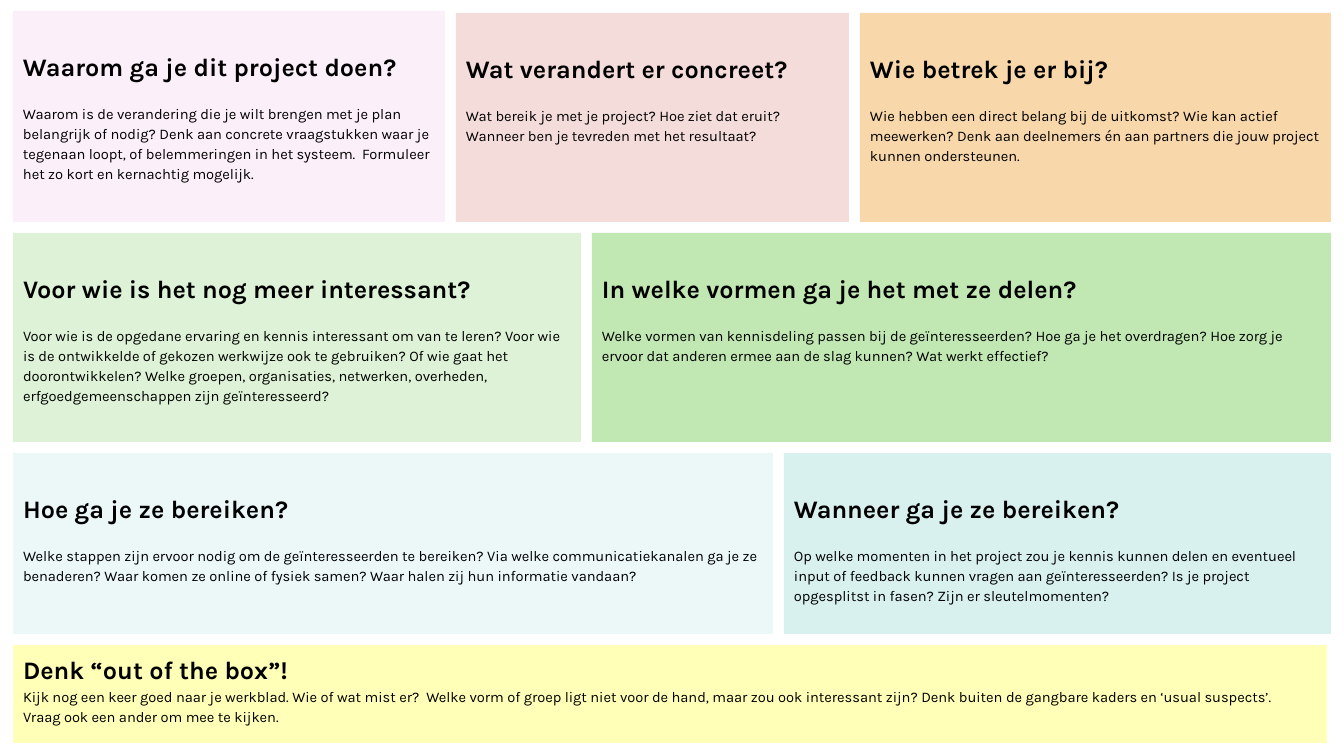
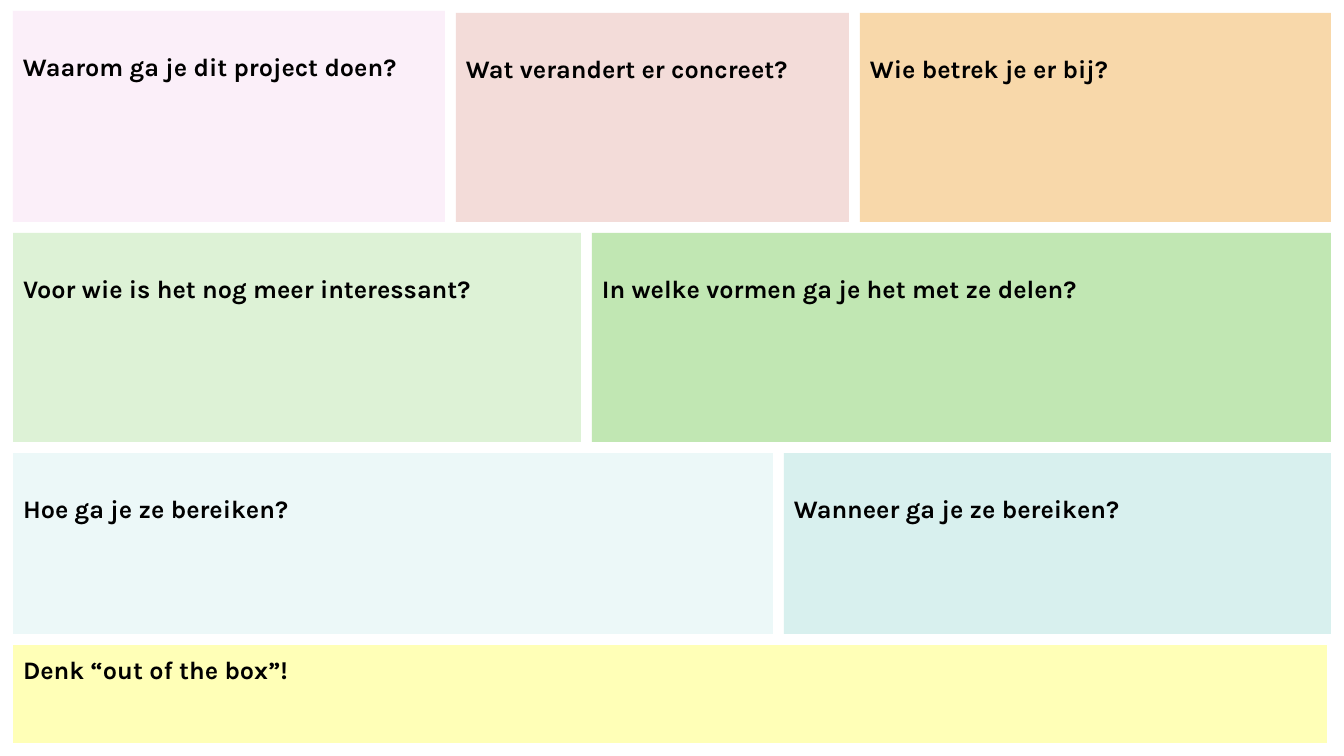
import dataclasses
import typing

import pptx
import pptx.dml.color
import pptx.enum.shapes
import pptx.enum.text
import pptx.oxml
import pptx.oxml.ns
import pptx.util

EMU_PER_PX = 12192000 / 1344


def px(length):
    return pptx.util.Emu(round(length * EMU_PER_PX))


@dataclasses.dataclass(frozen=True)
class Theme:
    font: str = "Karla"
    ink: str = "000000"
    pink: str = "FBEFF9"
    rose: str = "F3DCD9"
    orange: str = "F8D8AA"
    light_green: str = "DDF2D6"
    green: str = "C1E7B3"
    ice: str = "ECF8F8"
    teal: str = "AEE0DB"
    yellow: str = "FFFF66"
    tint_percent: int = 47
    heading_size: float = 18
    body_size: float = 10.5
    line_spacing: float = 1.15


THEME = Theme()

# Sheet grid, in px
SLIDE_SIZE = (1344, 756)
MARGIN_LEFT, MARGIN_TOP, GAP = 13, 13, 11
INSET_X, INSET_Y = 10, 5


@dataclasses.dataclass(frozen=True)
class Card:
    width: int
    colour: str
    heading: str
    body: str
    tinted: bool = False
    rise: int = 0  # how far the card reaches above its row


@dataclasses.dataclass(frozen=True)
class Row:
    height: int
    cards: typing.Tuple[Card, ...]
    heading_drop: int = 31  # free space above the heading
    body_gap: int = 20      # free space between heading and body


ROWS = (
    Row(209, (
        Card(432, THEME.pink, "Waarom ga je dit project doen?",
             "Waarom is de verandering die je wilt brengen met je plan belangrijk of nodig? "
             "Denk aan concrete vraagstukken waar je tegenaan loopt, of belemmeringen in het "
             "systeem.  Formuleer het zo kort en kernachtig mogelijk.", rise=2),
        Card(393, THEME.rose, "Wat verandert er concreet?",
             "Wat bereik je met je project? Hoe ziet dat eruit? "
             "Wanneer ben je tevreden met het resultaat?"),
        Card(471, THEME.orange, "Wie betrek je er bij?",
             "Wie hebben een direct belang bij de uitkomst? Wie kan actief meewerken? "
             "Denk aan deelnemers én aan partners die jouw project kunnen ondersteunen."),
    )),
    Row(209, (
        Card(568, THEME.light_green, "Voor wie is het nog meer interessant?",
             "Voor wie is de opgedane ervaring en kennis interessant om van te leren? "
             "Voor wie is de ontwikkelde of gekozen werkwijze ook te gebruiken? "
             "Of wie gaat het doorontwikkelen? Welke groepen, organisaties, netwerken, "
             "overheden, erfgoedgemeenschappen zijn geïnteresseerd?"),
        Card(739, THEME.green, "In welke vormen ga je het met ze delen?",
             "Welke vormen van kennisdeling passen bij de geïnteresseerden? "
             "Hoe ga je het overdragen? Hoe zorg je ervoor dat anderen ermee aan de slag "
             "kunnen? Wat werkt effectief?"),
    )),
    Row(181, (
        Card(760, THEME.ice, "Hoe ga je ze bereiken?",
             "Welke stappen zijn ervoor nodig om de geïnteresseerden te bereiken? "
             "Via welke communicatiekanalen ga je ze benaderen? Waar komen ze online of "
             "fysiek samen? Waar halen zij hun informatie vandaan?"),
        Card(547, THEME.teal, "Wanneer ga je ze bereiken?",
             "Op welke momenten in het project zou je kennis kunnen delen en eventueel "
             "input of feedback kunnen vragen aan geïnteresseerden? "
             "Is je project opgesplitst in fasen? Zijn er sleutelmomenten?", tinted=True),
    )),
    Row(98, (
        Card(1314, THEME.yellow, "Denk “out of the box”!",
             "Kijk nog een keer goed naar je werkblad. Wie of wat mist er?  Welke vorm of "
             "groep ligt niet voor de hand, maar zou ook interessant zijn? Denk buiten de "
             "gangbare kaders en ‘usual suspects’.  Vraag ook een ander om mee te kijken.",
             tinted=True),
    ), heading_drop=0, body_gap=0),
)


def fill_shape(shape, colour, tinted):
    shape.fill.solid()
    shape.fill.fore_color.rgb = pptx.dml.color.RGBColor.from_string(colour)
    if tinted:
        colour_node = shape.fill._xPr.find(".//" + pptx.oxml.ns.qn("a:srgbClr"))
        alpha = colour_node.makeelement(
            pptx.oxml.ns.qn("a:alpha"), {"val": str(THEME.tint_percent * 1000)})
        colour_node.append(alpha)


def write_para(para, text, size, bold=False):
    para.alignment = pptx.enum.text.PP_ALIGN.LEFT
    para.line_spacing = THEME.line_spacing
    span = para.add_run()
    span.text = text
    span.font.name = THEME.font
    span.font.size = pptx.util.Pt(size)
    span.font.bold = bold
    span.font.color.rgb = pptx.dml.color.RGBColor.from_string(THEME.ink)


def add_card(page, card, row, left, top, with_body):
    """Place one coloured question box with its heading and optional explanation."""
    box = page.shapes.add_shape(
        pptx.enum.shapes.MSO_SHAPE.RECTANGLE,
        px(left), px(top - card.rise), px(card.width), px(row.height + card.rise))
    box.shadow.inherit = False
    box.line.fill.background()
    fill_shape(box, card.colour, card.tinted)

    frame = box.text_frame
    frame.word_wrap = True
    frame.vertical_anchor = pptx.enum.text.MSO_ANCHOR.TOP
    frame.margin_left = frame.margin_right = px(INSET_X)
    frame.margin_top = px(INSET_Y + row.heading_drop)
    frame.margin_bottom = px(INSET_Y)

    write_para(frame.paragraphs[0], card.heading, THEME.heading_size, bold=True)
    if with_body:
        para = frame.add_paragraph()
        if row.body_gap:
            para.space_before = px(row.body_gap)
        write_para(para, card.body, THEME.body_size)


def add_worksheet(deck, with_body):
    """Add a page with all rows of cards, with or without the explanations."""
    page = deck.slides.add_slide(deck.slide_layouts.get_by_name("Blank"))
    top = MARGIN_TOP
    for row in ROWS:
        left = MARGIN_LEFT
        for card in row.cards:
            add_card(page, card, row, left, top, with_body)
            left += card.width + GAP
        top += row.height + GAP


def main():
    deck = pptx.Presentation()
    deck.slide_width, deck.slide_height = (px(side) for side in SLIDE_SIZE)
    for with_body in (True, False):
        add_worksheet(deck, with_body)
    deck.save("out.pptx")


if __name__ == "__main__":
    main()
